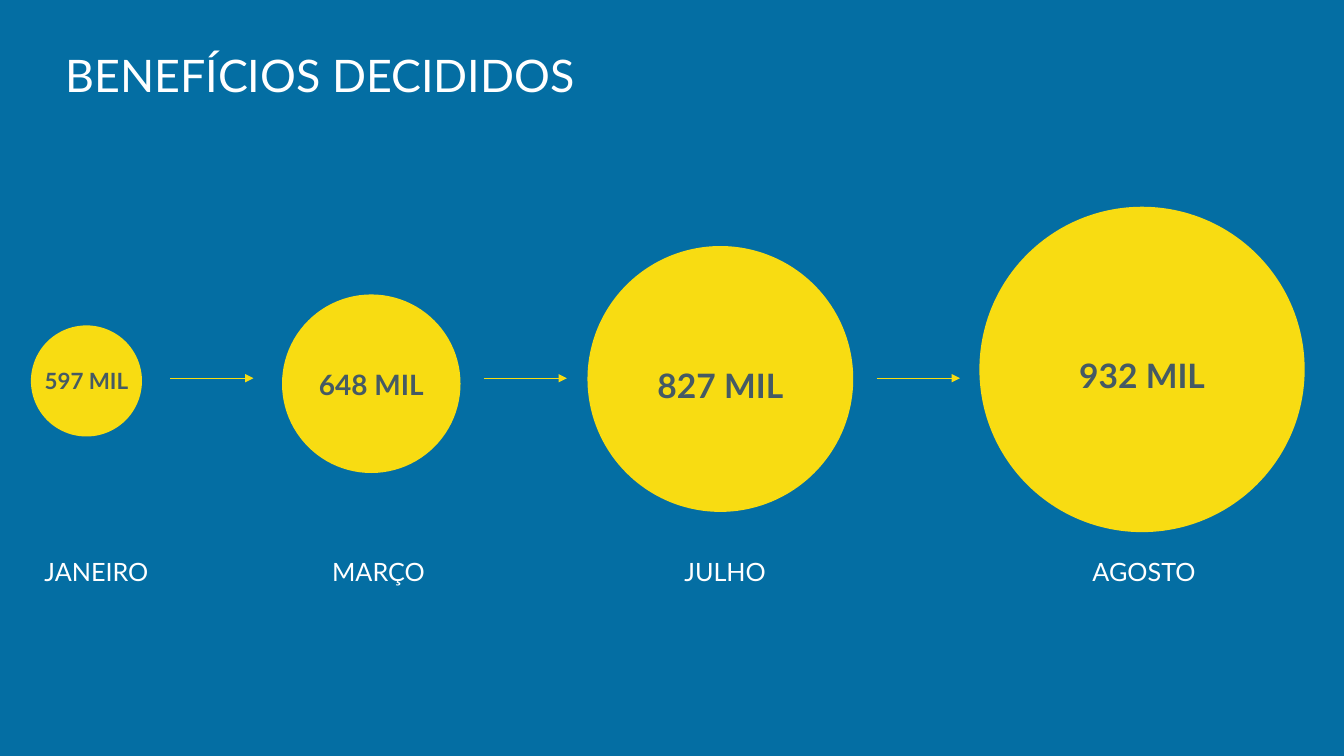
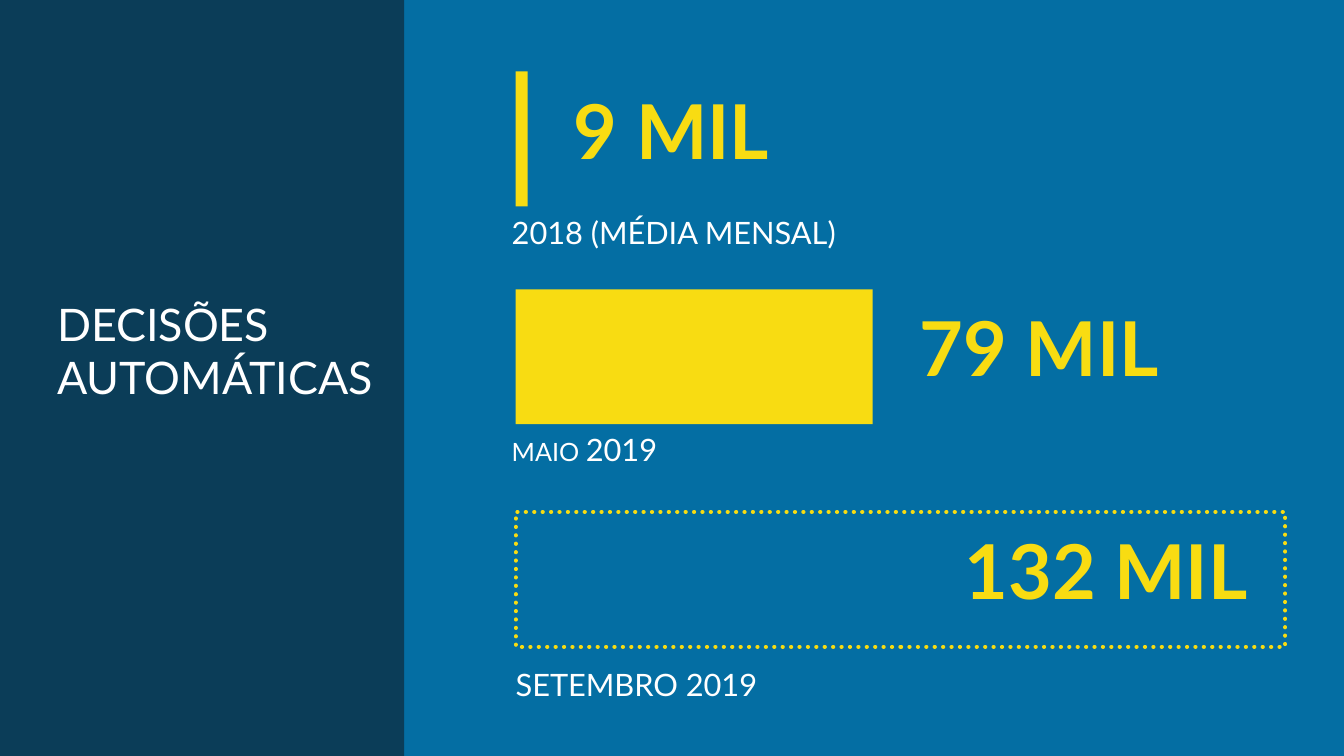
from dataclasses import dataclass

from lxml import etree
from pptx import Presentation
from pptx.dml.color import RGBColor
from pptx.enum.dml import MSO_LINE
from pptx.enum.shapes import MSO_CONNECTOR, MSO_SHAPE
from pptx.enum.text import MSO_ANCHOR, PP_ALIGN
from pptx.oxml.ns import qn
from pptx.util import Cm, Pt

RECTANGLE, OVAL = MSO_SHAPE.RECTANGLE, MSO_SHAPE.OVAL
LEFT, CENTER = PP_ALIGN.LEFT, PP_ALIGN.CENTER
STRAIGHT = MSO_CONNECTOR.STRAIGHT
DOTTED = MSO_LINE.ROUND_DOT
TOP = MSO_ANCHOR.TOP


@dataclass(frozen=True)
class Theme:
    font: str = "Lato"
    blue: RGBColor = RGBColor(0x04, 0x6E, 0xA3)
    navy: RGBColor = RGBColor(0x0B, 0x3D, 0x58)
    yellow: RGBColor = RGBColor(0xF8, 0xDC, 0x12)
    slate: RGBColor = RGBColor(0x45, 0x5A, 0x64)
    white: RGBColor = RGBColor(0xFF, 0xFF, 0xFF)
    title: int = 32
    figure: int = 54
    caption: int = 22
    month: int = 18


theme = Theme()
title_style = {"color": theme.white}


def add_text(slide, paragraphs, left, top, width, height, color,
             bold=False, align=LEFT):
    """Add a text box; each paragraph is a list of (text, size) runs."""
    box = slide.shapes.add_textbox(Cm(left), Cm(top), Cm(width), Cm(height))
    frame = box.text_frame
    frame.word_wrap = True
    frame.vertical_anchor = TOP
    for index, runs in enumerate(paragraphs):
        paragraph = frame.add_paragraph() if index else frame.paragraphs[0]
        paragraph.alignment = align
        for text, size in runs:
            run = paragraph.add_run()
            run.text = text
            run.font.name = theme.font
            run.font.size = Pt(size)
            run.font.bold = bold
            run.font.color.rgb = color


def add_block(slide, kind, left, top, width, height, fill=None):
    """Add a plain shape; without a fill it gets a dotted outline."""
    shape = slide.shapes.add_shape(kind, Cm(left), Cm(top), Cm(width), Cm(height))
    shape.shadow.inherit = False
    if fill is not None:
        shape.fill.solid()
        shape.fill.fore_color.rgb = fill
        shape.line.fill.background()
    else:
        shape.fill.background()
        shape.line.color.rgb = theme.yellow
        shape.line.width = Pt(3)
        shape.line.dash_style = DOTTED
        shape.line._get_or_add_ln().set("cap", "rnd")


presentation = Presentation()
presentation.slide_width = Cm(33.88)
presentation.slide_height = Cm(19.05)
blank = presentation.slide_layouts[6]

# Shared background
background = presentation.slide_master.background.fill
background.solid()
background.fore_color.rgb = theme.blue

# Slide 1: growing circles
slide = presentation.slides.add_slide(blank)
add_text(slide, [[("BENEFÍCIOS DECIDIDOS", theme.title)]],
         1.4, 1.09, 30.2, 1.75, **title_style)

# month, value, value size, circle centre x and y, diameter, value top, month centre x
months = [
    ("JANEIRO", "597 MIL", 16, 2.18, 9.6, 2.8, 9.12, 2.43),
    ("MARÇO", "648 MIL", 20, 9.36, 9.67, 4.5, 9.14, 9.54),
    ("JULHO", "827 MIL", 24, 18.16, 9.55, 6.7, 9.07, 18.28),
    ("AGOSTO", "932 MIL", 24, 28.79, 9.31, 8.2, 8.81, 28.84),
]
value_width, month_width = 4.3, 4.8
for month, value, size, x, y, diameter, value_top, month_x in months:
    add_block(slide, OVAL, x - diameter / 2, y - diameter / 2,
              diameter, diameter, theme.yellow)
    add_text(slide, [[(value, size)]], x - value_width / 2, value_top,
             value_width, 1.45, theme.slate, bold=True, align=CENTER)
    add_text(slide, [[(month, theme.month)]], month_x - month_width / 2, 13.9,
             month_width, 1.2, theme.white, align=CENTER)

# Arrows between circles
arrow_y, arrow_length = Cm(9.53), 2.1
for start in (4.29, 12.19, 22.1):
    arrow = slide.shapes.add_connector(
        STRAIGHT, Cm(start), arrow_y, Cm(start + arrow_length), arrow_y)
    arrow.line.color.rgb = theme.yellow
    arrow.line.width = Pt(0.75)
    etree.SubElement(arrow.line._get_or_add_ln(), qn("a:tailEnd"), type="triangle")
    etree.SubElement(arrow._element.spPr, qn("a:effectLst"))

# Slide 2: side panel with title
slide = presentation.slides.add_slide(blank)
add_block(slide, RECTANGLE, 0, 0, 10.19, 19.05, theme.navy)
add_text(slide, [[("DECISÕES", theme.title)], [("AUTOMÁTICAS", theme.title)]],
         1.19, 7.34, 9, 3.2, **title_style)

# Bars: top, width, fill, figure, figure centre x, caption runs, caption left and top
bars = [
    (1.8, 0.3, theme.yellow, "9 MIL", 16.93,
     [("2018 (MÉDIA MENSAL)", theme.caption)], 12.65, 5.26),
    (7.29, 9, theme.yellow, "79 MIL", 26.2,
     [("MAIO ", theme.month), ("2019", theme.caption)], 12.65, 10.72),
    (12.9, 19.4, None, "132 MIL", 27.88,
     [("SETEMBRO 2019", theme.caption)], 12.75, 16.64),
]
figure_width = 8.6
for top, width, fill, figure, figure_x, caption, caption_left, caption_top in bars:
    add_block(slide, RECTANGLE, 13, top, width, 3.4, fill)
    add_text(slide, [[(figure, theme.figure)]], figure_x - figure_width / 2,
             top + 0.18, figure_width, 2.6, theme.yellow, bold=True, align=CENTER)
    add_text(slide, [caption], caption_left, caption_top, 12, 1.2, theme.white)

presentation.save("out.pptx")
